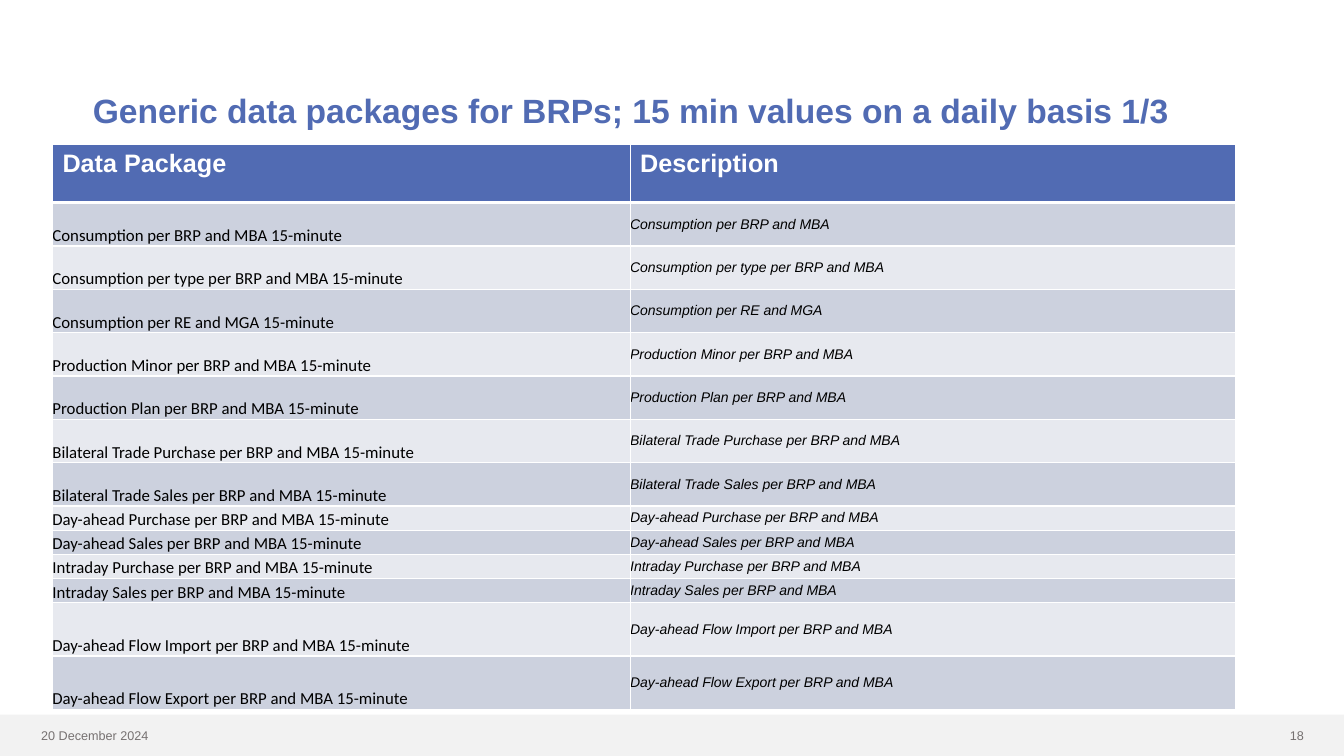
"""Build the slide listing generic 15-minute data packages for BRPs."""
from dataclasses import dataclass

from lxml import etree
from pptx import Presentation
from pptx.dml.color import RGBColor
from pptx.enum.shapes import MSO_SHAPE
from pptx.enum.text import MSO_ANCHOR, MSO_AUTO_SIZE, PP_ALIGN
from pptx.oxml.ns import qn
from pptx.util import Inches, Pt

RECTANGLE = MSO_SHAPE.RECTANGLE
TOP, MIDDLE, BOTTOM = MSO_ANCHOR.TOP, MSO_ANCHOR.MIDDLE, MSO_ANCHOR.BOTTOM
NO_AUTOFIT = MSO_AUTO_SIZE.NONE
LEFT, RIGHT = PP_ALIGN.LEFT, PP_ALIGN.RIGHT

COLORS = {
    "accent": "516BB3",
    "band_dark": "CCD1DE",
    "band_light": "E7E9EF",
    "white": "FFFFFF",
    "black": "000000",
    "footer_bar": "F2F2F2",
    "footer_text": "767171",
}


@dataclass(frozen=True)
class TextStyle:
    """Character formatting of a paragraph."""
    size: float
    color: str
    name: str = "Arial"
    bold: bool = False
    italic: bool = False


@dataclass(frozen=True)
class Package:
    """A data package and the height of its row in inches."""
    name: str
    height: float = 0.43


@dataclass(frozen=True)
class FooterText:
    """A small text in the footer bar."""
    text: str
    left: float
    width: float
    align: PP_ALIGN


TITLE = TextStyle(24, "accent", bold=True)
HEADER = TextStyle(18, "white", bold=True)
NAME = TextStyle(12, "black", name="Calibri")
DESCRIPTION = TextStyle(10, "black", italic=True)
FOOTER = TextStyle(9, "footer_text")

COLUMN_WIDTHS = (5.73, 6)
HEADER_HEIGHT = 0.58
PACKAGES = (
    Package("Consumption per BRP and MBA"),
    Package("Consumption per type per BRP and MBA"),
    Package("Consumption per RE and MGA"),
    Package("Production Minor per BRP and MBA"),
    Package("Production Plan per BRP and MBA"),
    Package("Bilateral Trade Purchase per BRP and MBA"),
    Package("Bilateral Trade Sales per BRP and MBA"),
    Package("Day-ahead Purchase per BRP and MBA", 0.24),
    Package("Day-ahead Sales per BRP and MBA", 0.24),
    Package("Intraday Purchase per BRP and MBA", 0.24),
    Package("Intraday Sales per BRP and MBA", 0.24),
    Package("Day-ahead Flow Import per BRP and MBA", 0.53),
    Package("Day-ahead Flow Export per BRP and MBA", 0.53),
)
FOOTER_TEXTS = (
    FooterText("18", 12.21, 0.82, RIGHT),
    FooterText("20 December 2024", 0.31, 2.12, LEFT),
)


def rgb(key: str) -> RGBColor:
    """Return the named colour."""
    return RGBColor.from_string(COLORS[key])


def write(tf, text: str, style: TextStyle, align: PP_ALIGN = LEFT) -> None:
    """Put one formatted paragraph in a text frame."""
    tf.word_wrap = True
    p = tf.paragraphs[0]
    p.text = text
    p.alignment = align
    p.font.name = style.name
    p.font.size = Pt(style.size)
    p.font.bold = style.bold
    p.font.italic = style.italic
    p.font.color.rgb = rgb(style.color)


def add_borders(cell, bottom: float) -> None:
    """Draw white borders around a cell, with the given bottom width in points."""
    tc_pr = cell._tc.get_or_add_tcPr()
    edges = {"a:lnL": 1, "a:lnR": 1, "a:lnT": 1, "a:lnB": bottom}
    for i, (tag, width) in enumerate(edges.items()):
        ln = etree.Element(qn(tag), w=str(Pt(width)))
        fill = etree.SubElement(ln, qn("a:solidFill"))
        etree.SubElement(fill, qn("a:srgbClr"), val=COLORS["white"])
        tc_pr.insert(i, ln)


def fill_cell(cell, text: str, style: TextStyle, fill: str,
              anchor: MSO_ANCHOR, bottom: float = 1) -> None:
    """Write and colour one table cell."""
    write(cell.text_frame, text, style)
    cell.vertical_anchor = anchor
    cell.fill.solid()
    cell.fill.fore_color.rgb = rgb(fill)
    add_borders(cell, bottom)


def add_package_table(s) -> None:
    """Add the table of data packages."""
    heights = [HEADER_HEIGHT, *(package.height for package in PACKAGES)]
    table = s.shapes.add_table(
        len(heights), len(COLUMN_WIDTHS), Inches(0.52), Inches(1.43),
        Inches(sum(COLUMN_WIDTHS)), Inches(sum(heights))).table
    for column, width in zip(table.columns, COLUMN_WIDTHS):
        column.width = Inches(width)
    for row, height in zip(table.rows, heights):
        row.height = Inches(height)
    for col, text in enumerate(("Data Package", "Description")):
        fill_cell(table.cell(0, col), text, HEADER, "accent", TOP, bottom=3)
    for row, package in enumerate(PACKAGES, 1):
        fill = "band_dark" if row % 2 else "band_light"
        contents = ((f"{package.name} 15-minute", NAME, BOTTOM),
                    (package.name, DESCRIPTION, MIDDLE))
        for col, (text, style, anchor) in enumerate(contents):
            cell = table.cell(row, col)
            cell.margin_left = cell.margin_right = Inches(0)
            cell.margin_top = cell.margin_bottom = Inches(0)
            fill_cell(cell, text, style, fill, anchor)


def add_footer(s) -> None:
    """Add the footer bar with the page number and date."""
    bar = s.shapes.add_shape(RECTANGLE, Inches(0), Inches(7.09),
                             Inches(13.33), Inches(0.41))
    bar.shadow.inherit = False
    bar.fill.solid()
    bar.fill.fore_color.rgb = rgb("footer_bar")
    bar.line.fill.background()
    for item in FOOTER_TEXTS:
        box = s.shapes.add_textbox(Inches(item.left), Inches(7.17),
                                   Inches(item.width), Inches(0.25))
        write(box.text_frame, item.text, FOOTER, item.align)


def add_title(s) -> None:
    """Place and fill the title."""
    title = s.shapes.title
    title.left, title.top = Inches(0.82), Inches(0.39)
    title.width, title.height = Inches(11.73), Inches(1.45)
    tf = title.text_frame
    write(tf, "Generic data packages for BRPs; 15 min values on a daily basis 1/3",
          TITLE)
    tf.auto_size = NO_AUTOFIT
    tf.vertical_anchor = MIDDLE
    tf.paragraphs[0].line_spacing = 0.9


def main() -> None:
    """Build and save the slide."""
    prs = Presentation()
    prs.slide_width, prs.slide_height = Inches(13.33), Inches(7.5)
    s = prs.slides.add_slide(prs.slide_layouts[5])
    add_footer(s)
    add_title(s)
    add_package_table(s)
    prs.save("out.pptx")


if __name__ == "__main__":
    main()
